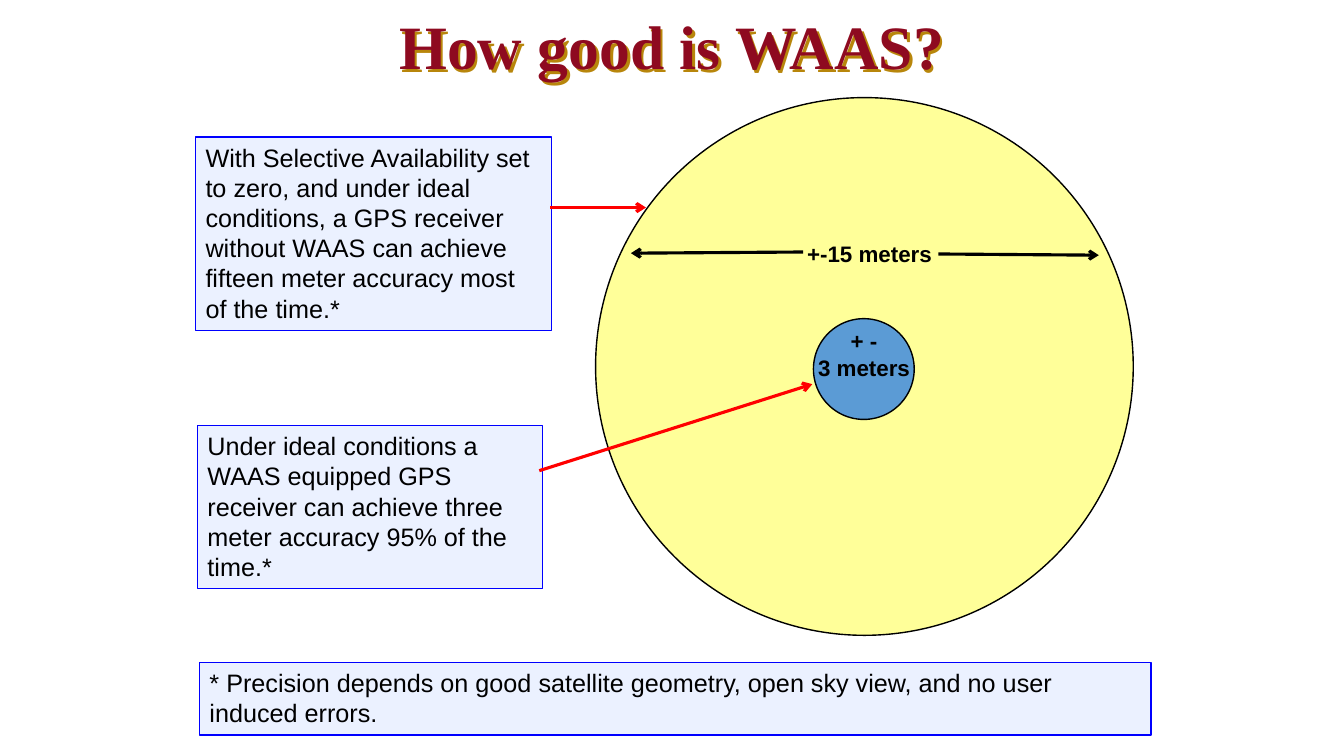
from typing import NamedTuple

import pptx
import pptx.dml.color
import pptx.enum.shapes
import pptx.enum.text
import pptx.oxml
import pptx.oxml.ns
import pptx.util
from pptx.dml.color import RGBColor
from pptx.enum.shapes import MSO_SHAPE
from pptx.enum.text import MSO_ANCHOR, MSO_AUTO_SIZE, PP_ALIGN
from pptx.util import Cm, Pt

BLACK = RGBColor(0x00, 0x00, 0x00)
RED = RGBColor(0xFF, 0x00, 0x00)
MAROON = RGBColor(0x8E, 0x0A, 0x20)
GOLD = RGBColor(0xB8, 0x86, 0x0B)
YELLOW = RGBColor(0xFF, 0xFF, 0x99)
BLUE = RGBColor(0x5B, 0x9B, 0xD5)
NOTE_FILL = RGBColor(0xEB, 0xF1, 0xFF)
NOTE_LINE = RGBColor(0x00, 0x00, 0xFF)


class Circle(NamedTuple):
    left: float
    top: float
    diameter: float
    fill: RGBColor


class TextItem(NamedTuple):
    left: float
    top: float
    width: float
    height: float
    lines: tuple[str, ...]
    align: PP_ALIGN = PP_ALIGN.LEFT


class Arrow(NamedTuple):
    x1: float
    y1: float
    x2: float
    y2: float
    color: RGBColor


CIRCLES = [
    Circle(15.01, 2.46, 13.55, YELLOW),
    Circle(20.5, 8.03, 2.54, BLUE),
]
LABELS = [
    TextItem(20.29, 8.13, 2.97, 1.63, ("+ -", "3 meters"), PP_ALIGN.CENTER),
    TextItem(20.09, 5.92, 3.81, 0.94, ("+-15 meters",)),
]
SPAN_ARROWS = [
    Arrow(20.24, 6.35, 15.9, 6.38, BLACK),
    Arrow(23.65, 6.4, 27.69, 6.43, BLACK),
]
NOTES = [
    TextItem(4.93, 3.45, 8.97, 4.88, (
        "With Selective Availability set to zero, and under ideal conditions, "
        "a GPS receiver without WAAS can achieve fifteen meter accuracy most "
        "of the time.*",)),
    TextItem(4.98, 10.72, 8.69, 4.11, (
        "Under ideal conditions a WAAS equipped GPS receiver can achieve "
        "three meter accuracy 95% of the time.*",)),
    TextItem(5.03, 16.69, 23.98, 1.83, (
        "* Precision depends on good satellite geometry, open sky view, and "
        "no user induced errors.",)),
]
NOTE_ARROWS = [
    Arrow(13.59, 11.86, 20.47, 9.68, RED),
    Arrow(13.87, 5.23, 16.28, 5.23, RED),
]


def add_run(p, text: str, size: float, color: RGBColor, bold: bool,
            font: str = "Arial") -> None:
    r = p.add_run()
    r.text = text
    r.font.name = font
    r.font.size = Pt(size)
    r.font.bold = bold
    r.font.color.rgb = color


def add_title(s, text: str) -> None:
    sp = s.shapes.title
    sp.left, sp.top, sp.width, sp.height = Cm(4.23), Cm(0), Cm(25.4), Cm(2.26)
    tf = sp.text_frame
    tf.auto_size = MSO_AUTO_SIZE.NONE
    tf.vertical_anchor = MSO_ANCHOR.MIDDLE
    p = tf.paragraphs[0]
    p.alignment = PP_ALIGN.CENTER
    add_run(p, text, 44, MAROON, True, "Times New Roman")
    shadow = pptx.oxml.parse_xml(
        f'<a:effectLst {pptx.oxml.ns.nsdecls("a")}>'
        '<a:outerShdw dist="35921" dir="2700000" algn="ctr">'
        f'<a:srgbClr val="{GOLD}"/></a:outerShdw></a:effectLst>')
    sp.element.spPr.append(shadow)


def style_shape(sp, fill: RGBColor, line: RGBColor) -> None:
    sp.shadow.inherit = False
    sp.fill.solid()
    sp.fill.fore_color.rgb = fill
    sp.line.color.rgb = line
    sp.line.width = Pt(1)


def add_circle(s, c: Circle) -> None:
    sp = s.shapes.add_shape(MSO_SHAPE.OVAL, Cm(c.left), Cm(c.top),
                            Cm(c.diameter), Cm(c.diameter))
    style_shape(sp, c.fill, BLACK)


def fill_text(sp, item: TextItem, size: float, bold: bool) -> None:
    tf = sp.text_frame
    tf.word_wrap = True
    tf.auto_size = MSO_AUTO_SIZE.SHAPE_TO_FIT_TEXT
    tf.vertical_anchor = MSO_ANCHOR.TOP
    p = tf.paragraphs[0]
    p.alignment = item.align
    for i, line in enumerate(item.lines):
        if i:
            p.add_line_break()
        add_run(p, line, size, BLACK, bold)


def add_label(s, item: TextItem) -> None:
    sp = s.shapes.add_textbox(Cm(item.left), Cm(item.top),
                              Cm(item.width), Cm(item.height))
    fill_text(sp, item, 16, True)


def add_note(s, item: TextItem) -> None:
    sp = s.shapes.add_shape(MSO_SHAPE.RECTANGLE, Cm(item.left), Cm(item.top),
                            Cm(item.width), Cm(item.height))
    style_shape(sp, NOTE_FILL, NOTE_LINE)
    fill_text(sp, item, 18, False)


def add_arrow(s, a: Arrow) -> None:
    cx = s.shapes.add_connector(pptx.enum.shapes.MSO_CONNECTOR.STRAIGHT,
                                Cm(a.x1), Cm(a.y1), Cm(a.x2), Cm(a.y2))
    cx.line.color.rgb = a.color
    cx.line.width = Pt(2.25)
    ns = pptx.oxml.ns.nsdecls("a")
    cx.line._get_or_add_ln().append(
        pptx.oxml.parse_xml(f'<a:tailEnd {ns} type="arrow"/>'))
    cx.element.spPr.append(pptx.oxml.parse_xml(f"<a:effectLst {ns}/>"))


def main() -> None:
    prs = pptx.Presentation()
    prs.slide_width, prs.slide_height = Cm(33.87), Cm(19.05)
    s = prs.slides.add_slide(prs.slide_layouts[5])
    add_title(s, "How good is WAAS?")
    for circle in CIRCLES:
        add_circle(s, circle)
    for label in LABELS:
        add_label(s, label)
    for arrow in SPAN_ARROWS:
        add_arrow(s, arrow)
    for note in NOTES:
        add_note(s, note)
    for arrow in NOTE_ARROWS:
        add_arrow(s, arrow)
    prs.save("out.pptx")


if __name__ == "__main__":
    main()
